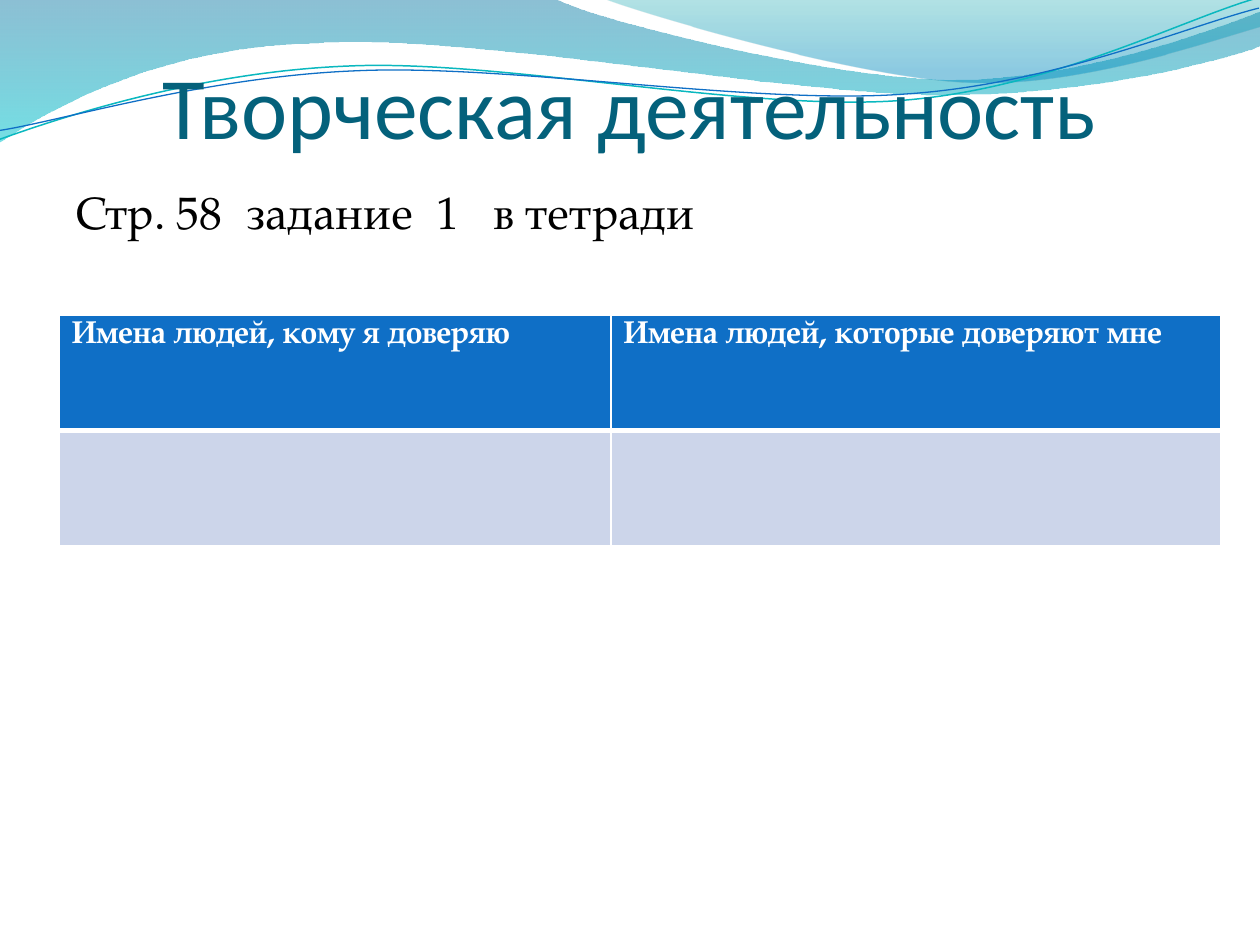
from dataclasses import dataclass

from lxml import etree
from pptx import Presentation
from pptx import util as u
from pptx.dml.color import RGBColor
from pptx.enum import text
from pptx.oxml.ns import qn


@dataclass(frozen=True)
class Theme:
    title_font: str = "Calibri"
    body_font: str = "TeX Gyre Pagella"
    title_size: int = 50
    body_size: int = 26
    table_size: int = 18
    title: str = "04617B"
    body: str = "000000"
    white: str = "FFFFFF"
    blue: str = "0F6FC6"
    teal: str = "0AB8BF"
    pale: str = "CCD5EA"
    # Gradient stops: position in percent, colour, opacity in percent
    left_wave: tuple = ((0, "0074A1", 45), (100, "00C6CF", 55))
    right_wave: tuple = ((0, "00A1A9", 30), (80, "008BBF", 45))


THEME = Theme()
TILT = 357.3

# Each outline is a start point, then points (2 numbers) or Bezier curves (6 numbers)
LEFT_WAVE = [
    (0, 0), (4.4, -0.01),
    (4.76, 0.17, 6.64, 0.63, 7.58, 0.63), (8.53, 0.63, 9.58, 0.26, 10, 0.09),
    (10.01, 0.36),
    (9.83, 0.44, 8.7, 0.76, 7.46, 0.75), (6.22, 0.75, 3.82, 0.28, 2.57, 0.34),
    (1.29, 0.36, 0.46, 0.83, -0.01, 1.13), (0, 0),
]
RIGHT_WAVE = [
    (4.79, -0.01),
    (5.09, 0.11, 6.82, 0.62, 7.69, 0.65), (8.56, 0.69, 9.61, 0.32, 10, 0.21),
    (10, 0), (4.79, -0.01),
]
# The two thin lines are given before they are tilted
TEAL_LINE = [
    (-0.02, 0.87),
    (0.47, 0.72, 1.58, 0.41, 2.77, 0.42), (3.96, 0.42, 5.91, 0.93, 7.12, 0.9),
    (8.32, 0.87, 9.4, 0.36, 10, 0.22),
]
BLUE_LINE = [
    (-0.02, 0.8),
    (0.46, 0.75, 1.64, 0.45, 2.83, 0.46), (4.03, 0.46, 5.96, 0.88, 7.16, 0.85),
    (8.35, 0.83, 9.42, 0.42, 10.01, 0.3),
]


def rgb(value):
    return RGBColor.from_string(value)


def inches(*lengths):
    return tuple(u.Inches(length) for length in lengths)


def add_outline(page, box, outline, closed):
    left, top = box
    points = [(left + u.Inches(part[i]), top + u.Inches(part[i + 1]))
              for part in outline for i in range(0, len(part), 2)]
    builder = page.shapes.build_freeform(*points[0], scale=1.0)
    builder.add_line_segments(points[1:], close=closed)
    shape = builder.convert_to_shape()
    shape.shadow.inherit = False
    # Join every three points of a curved part into one Bezier segment
    segments = iter(list(shape.element.spPr.iter(qn("a:lnTo"))))
    for part in outline[1:]:
        first = next(segments)
        if len(part) == 6:
            first.tag = qn("a:cubicBezTo")
            for _ in range(2):
                segment = next(segments)
                first.append(segment[0])
                segment.getparent().remove(segment)
    return shape


def add_waves(page, box):
    # Translucent bands, fading downwards
    for outline, stops in ((LEFT_WAVE, THEME.left_wave), (RIGHT_WAVE, THEME.right_wave)):
        wave = add_outline(page, box, outline, True)
        wave.line.fill.background()
        wave.fill.gradient()
        wave.fill.gradient_angle = 270
        for stop, (position, color, _) in zip(wave.fill.gradient_stops, stops):
            stop.position = position / 100
            stop.color.rgb = rgb(color)
        for node, (_, _, opacity) in zip(wave.element.spPr.iter(qn("a:srgbClr")), stops):
            etree.SubElement(node, qn("a:alpha"), val=str(opacity * 1000))
    # Thin crossing lines
    for outline, color, width in ((TEAL_LINE, THEME.teal, 0.85), (BLUE_LINE, THEME.blue, 0.75)):
        curve = add_outline(page, box, outline, False)
        curve.rotation = TILT
        curve.fill.background()
        curve.line.color.rgb = rgb(color)
        curve.line.width = u.Pt(width)


def style(font, name, size, color, bold=False):
    font.name, font.size, font.bold = name, u.Pt(size), bold
    font.color.rgb = rgb(color)


def add_title(page, box):
    frame = page.shapes.add_textbox(*box).text_frame
    frame.word_wrap = True
    frame.vertical_anchor = text.MSO_ANCHOR.BOTTOM
    frame.margin_left = frame.margin_right = frame.margin_bottom = 0
    frame.text = "Творческая деятельность"
    para = frame.paragraphs[0]
    para.alignment = text.PP_ALIGN.CENTER
    style(para.runs[0].font, THEME.title_font, THEME.title_size, THEME.title)


def add_task(page, box):
    frame = page.shapes.add_textbox(*box).text_frame
    frame.word_wrap = True
    frame.text = "Стр. 58  задание  1   в тетради"
    para = frame.paragraphs[0]
    properties = para._p.get_or_add_pPr()
    properties.set("marL", str(u.Inches(0.3)))
    properties.set("indent", str(u.Inches(-0.3)))
    style(para.runs[0].font, THEME.body_font, THEME.body_size, THEME.body)


def set_borders(cell, bottom):
    properties = cell._tc.get_or_add_tcPr()
    sides = (("lnL", 1), ("lnR", 1), ("lnT", 1), ("lnB", bottom))
    for index, (side, width) in enumerate(sides):
        line = etree.Element(qn("a:" + side), w=str(u.Pt(width)))
        fill = etree.SubElement(line, qn("a:solidFill"))
        etree.SubElement(fill, qn("a:srgbClr"), val=THEME.white)
        properties.insert(index, line)


def add_trust_table(page, box):
    headings = ("Имена людей, кому я доверяю", "Имена людей, которые доверяют мне")
    table = page.shapes.add_table(2, len(headings), *box).table
    for column, width in zip(table.columns, inches(4.38, 4.84)):
        column.width = width
    for index, heading in enumerate(headings):
        header, answer = table.cell(0, index), table.cell(1, index)
        header.text = heading
        style(header.text_frame.paragraphs[0].runs[0].font,
              THEME.body_font, THEME.table_size, THEME.white, bold=True)
        for cell, color, bottom in ((header, THEME.blue, 3), (answer, THEME.pale, 1)):
            cell.fill.solid()
            cell.fill.fore_color.rgb = rgb(color)
            set_borders(cell, bottom)


def main():
    deck = Presentation()
    deck.slide_width, deck.slide_height = inches(10, 7.5)
    page = deck.slides.add_slide(deck.slide_layouts[6])
    add_waves(page, inches(0, 0))
    add_title(page, inches(0.5, 0.23, 9, 1.02))
    add_task(page, inches(0.5, 1.41, 9, 5.51))
    add_trust_table(page, inches(0.47, 2.5, 9.22, 1.83))
    deck.save("out.pptx")


if __name__ == "__main__":
    main()
